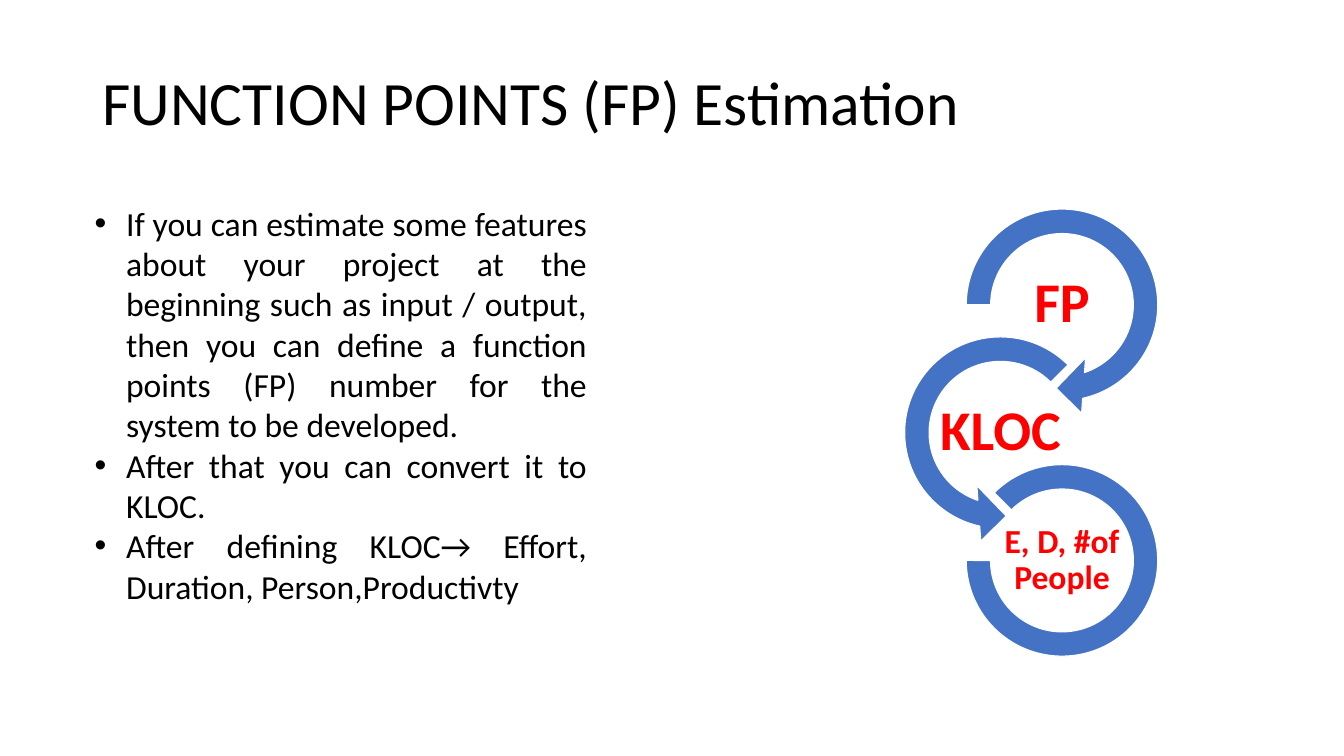
from pptx import Presentation
from pptx.dml.color import RGBColor
from pptx.enum.shapes import MSO_SHAPE
from pptx.enum.text import MSO_ANCHOR, MSO_AUTO_SIZE, PP_ALIGN
from pptx.oxml import parse_xml
from pptx.oxml.ns import nsdecls
from pptx.util import Pt

POINTS = [
    "If you can estimate some features about your project at the beginning "
    "such as input / output, then you can define a function points (FP) "
    "number for the system to be developed.",
    "After that you can convert it to KLOC.",
    "After defining KLOC→ Effort, Duration, Person,Productivty",
]

# label, text size, label width, inset, centre x, shape, diameter, adjustments
STEPS = [
    ("FP", 40, 88.6, 2.2, 123.6, MSO_SHAPE.CIRCULAR_ARROW, 159.1,
     (0.1098, 11.423, 45, 108, 0.125)),
    ("KLOC", 40, 124.6, 2.2, 79.6, MSO_SHAPE.LEFT_CIRCULAR_ARROW, 159.1,
     (0.1098, 11.423, 63, 189, 0.125)),
    ("E, D, #of People", 24, 88.6, 1.4, 123.6, MSO_SHAPE.BLOCK_ARC, 136.8,
     (135, 108, 0.127)),
]
PITCH = 91.3
LABEL_H = 43.9


def color(code):
    return RGBColor.from_string(code)


def apply(target, values):
    for name, value in values.items():
        setattr(target, name, value)


def add_text(slide, box, lines, font, para, frame, bullet=False):
    """Add a text box with one paragraph for each line."""
    shape = slide.shapes.add_textbox(*map(Pt, box))
    body = shape.text_frame
    apply(body, {"word_wrap": True, **frame})
    body.text = "\n".join(lines)
    for item in body.paragraphs:
        if bullet:
            props = item._p.get_or_add_pPr()
            props.set("marL", str(Pt(22.5)))
            props.set("indent", str(Pt(-22.5)))
            for tag in ('buFont {} typeface="Arial"', 'buChar {} char="•"'):
                props.append(parse_xml(f"<a:{tag.format(nsdecls('a'))}/>"))
        apply(item, para)
        run = item.runs[0].font
        apply(run, {"name": "Calibri", "size": Pt(font["size"]),
                    "bold": font.get("bold", False)})
        run.color.rgb = color(font.get("color", "000000"))


def add_title(slide, box):
    add_text(slide, box, ["FUNCTION POINTS (FP) Estimation"], {"size": 44},
             {"line_spacing": 0.9}, {"vertical_anchor": MSO_ANCHOR.MIDDLE})


def add_points(slide, box):
    add_text(slide, box, POINTS, {"size": 24},
             {"alignment": PP_ALIGN.JUSTIFY},
             {"auto_size": MSO_AUTO_SIZE.SHAPE_TO_FIT_TEXT}, bullet=True)


def add_ring(slide, kind, mid, size, adjust):
    x, y = mid
    box = (x - size / 2, y - size / 2, size, size)
    ring = slide.shapes.add_shape(kind, *map(Pt, box))
    ring.shadow.inherit = False
    ring.fill.solid()
    ring.fill.fore_color.rgb = color("4472C4")
    ring.line.color.rgb = color("FFFFFF")
    ring.line.width = Pt(0.85)
    for index, value in enumerate(adjust):
        ring.adjustments[index] = value


def add_chain(slide, box):
    """Stack the linked rings and their labels down the box."""
    left, top = box[:2]
    first = top + STEPS[0][6] / 2
    for row, step in enumerate(STEPS):
        label, size, width, inset, across, kind, ring, adjust = step
        x, y = left + across, first + row * PITCH
        add_ring(slide, kind, (x, y), ring, adjust)
        sides = ("left", "right", "top", "bottom")
        frame = {f"margin_{side}": Pt(inset) for side in sides}
        frame["vertical_anchor"] = MSO_ANCHOR.MIDDLE
        add_text(slide, (x - width / 2, y - LABEL_H / 2, width, LABEL_H),
                 [label], {"size": size, "bold": True, "color": "FF0000"},
                 {"alignment": PP_ALIGN.CENTER, "line_spacing": 0.9}, frame)


def main():
    deck = Presentation()
    apply(deck, {"slide_width": Pt(960), "slide_height": Pt(540)})
    slide = deck.slides.add_slide(deck.slide_layouts[6])
    add_title(slide, (66, 23, 828, 104.4))
    add_points(slide, (60.5, 141.1, 365.8, 298))
    add_chain(slide, (635, 138.2, 203, 331))
    deck.save("out.pptx")


if __name__ == "__main__":
    main()
